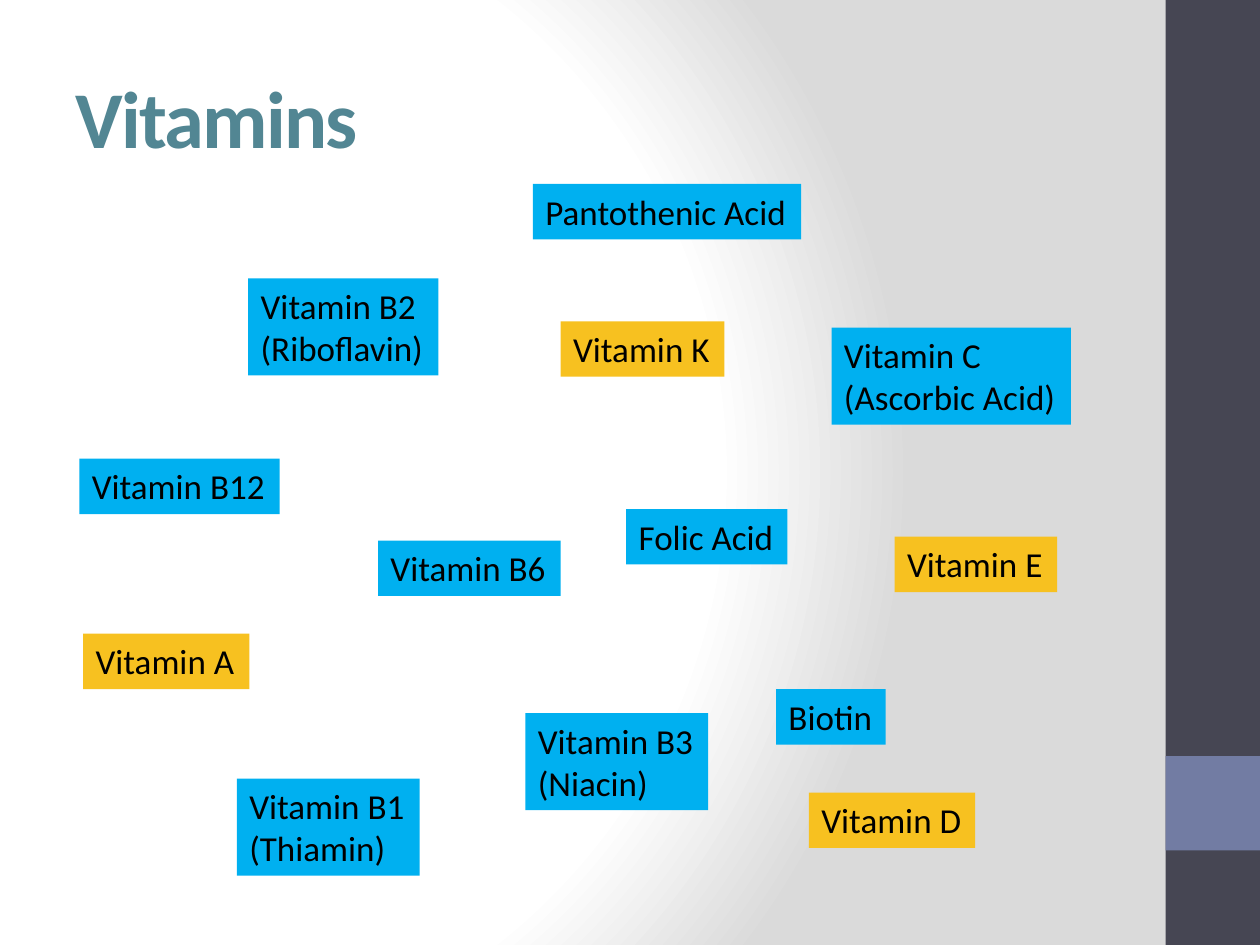
from pptx import Presentation
from pptx.dml.color import RGBColor as RGB
from pptx.enum.shapes import MSO_SHAPE as Kind
from pptx.enum.text import MSO_ANCHOR as Anchor, MSO_AUTO_SIZE as Fit, PP_ALIGN as Align
from pptx.oxml import parse_xml
from pptx.oxml.ns import nsdecls
from pptx.util import Inches, Pt

DARK = RGB(0x46, 0x46, 0x53)
SLATE = RGB(0x72, 0x7C, 0xA3)
TEAL = RGB(0x52, 0x86, 0x93)
BLUE = RGB(0x00, 0xB0, 0xF0)
GOLD = RGB(0xF7, 0xC1, 0x20)
BLACK = RGB(0, 0, 0)
WHITE = RGB(0xFF, 0xFF, 0xFF)
GREY = RGB(0xDA, 0xDA, 0xDA)

WATER = [
    (6.6, 2.6, 1.9, ["Vitamin C", "(Ascorbic Acid)"]),
    (1.88, 6.18, 1.45, ["Vitamin B1", "(Thiamin)"]),
    (1.97, 2.21, 1.51, ["Vitamin B2", "(Riboflavin)"]),
    (4.17, 5.66, 1.45, ["Vitamin B3", "(Niacin)"]),
    (4.23, 1.46, 2.13, ["Pantothenic Acid"]),
    (6.16, 5.47, 0.87, ["Biotin"]),
    (4.97, 4.04, 1.28, ["Folic Acid"]),
    (0.63, 3.64, 1.59, ["Vitamin B12"]),
    (3, 4.29, 1.45, ["Vitamin B6"]),
]
FAT = [
    (0.66, 5.03, 1.32, ["Vitamin A"]),
    (6.42, 6.29, 1.32, ["Vitamin D"]),
    (7.1, 4.26, 1.29, ["Vitamin E"]),
    (4.45, 2.55, 1.3, ["Vitamin K"]),
]


class Deck:
    font = "Calibri"
    size = 20

    def __init__(self, wide, high):
        self.prs = Presentation()
        self.prs.slide_width = Inches(wide)
        self.prs.slide_height = Inches(high)
        self.slide = self.prs.slides.add_slide(self.prs.slide_layouts[5])

    def glow(self, stops):
        self.slide.background.fill.solid()
        props = self.slide.background._cSld.bg.bgPr
        marks = "".join(
            f'<a:gs pos="{pos * 1000}"><a:srgbClr val="{color}"/></a:gs>'
            for pos, color in stops
        )
        grad = parse_xml(
            f'<a:gradFill {nsdecls("a")} rotWithShape="1"><a:gsLst>{marks}</a:gsLst>'
            '<a:path path="circle"><a:fillToRect l="20000" t="50000" r="100000" b="50000"/>'
            "</a:path></a:gradFill>"
        )
        props.replace(props[0], grad)

    def run(self, para, text, size, color, bold=False):
        run = para.add_run()
        run.text = text
        font = run.font
        font.name, font.size, font.bold = self.font, Pt(size), bold
        font.color.rgb = color
        return run

    def title(self, text, *box):
        shape = self.slide.shapes.title
        shape.left, shape.top, shape.width, shape.height = map(Inches, box)
        frame = shape.text_frame
        frame.auto_size = Fit.NONE
        frame.vertical_anchor = Anchor.MIDDLE
        para = frame.paragraphs[0]
        para.alignment = Align.LEFT
        run = self.run(para, text, 46, TEAL, True)
        run.font._element.set("spc", "-100")

    def band(self, color, *box):
        shape = self.slide.shapes.add_shape(Kind.RECTANGLE, *map(Inches, box))
        shape.shadow.inherit = False
        shape.fill.solid()
        shape.fill.fore_color.rgb = color
        shape.line.fill.background()

    def label(self, left, top, width, lines, color):
        high = 0.11 + 0.33 * len(lines)
        box = map(Inches, (left, top, width, high))
        shape = self.slide.shapes.add_textbox(*box)
        shape.fill.solid()
        shape.fill.fore_color.rgb = color
        frame = shape.text_frame
        frame.word_wrap = False
        frame.auto_size = Fit.SHAPE_TO_FIT_TEXT
        for i, line in enumerate(lines):
            para = frame.add_paragraph() if i else frame.paragraphs[0]
            self.run(para, line, self.size, BLACK)


def main():
    deck = Deck(10, 7.5)
    deck.glow([(0, WHITE), (75, WHITE), (100, GREY)])
    deck.band(DARK, 9.25, 0, 0.75, 7.5)
    deck.band(SLATE, 9.25, 6, 0.75, 0.75)
    deck.title("Vitamins", 0.5, 0.3, 8.33, 1.25)
    for color, group in ((BLUE, WATER), (GOLD, FAT)):
        for item in group:
            deck.label(*item, color)
    deck.prs.save("out.pptx")


if __name__ == "__main__":
    main()
